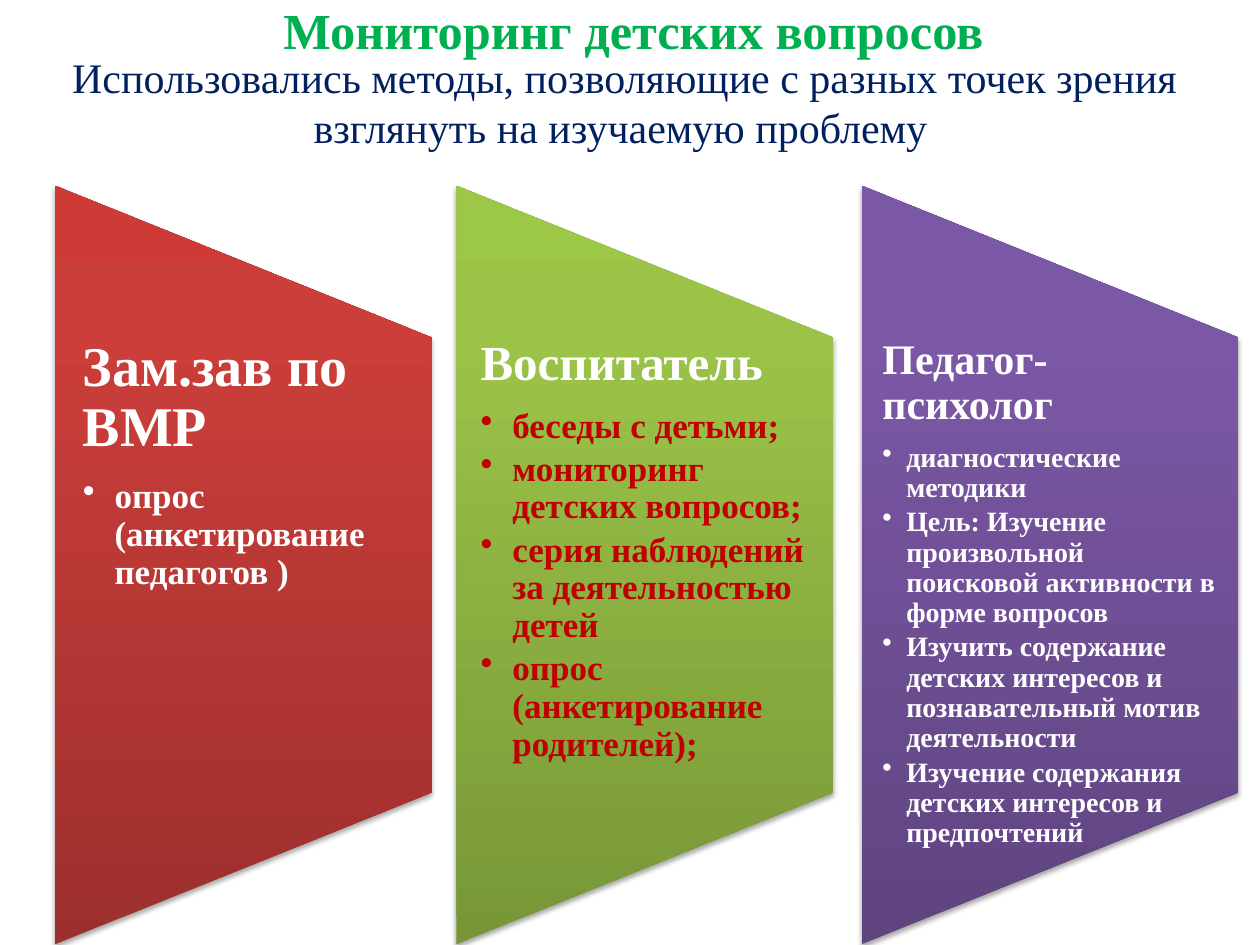
from dataclasses import dataclass

from lxml import etree
from pptx import Presentation
from pptx.dml.color import RGBColor
from pptx.enum.shapes import MSO_SHAPE
from pptx.enum.text import MSO_ANCHOR, PP_ALIGN
from pptx.oxml import parse_xml
from pptx.oxml.ns import qn
from pptx.util import Cm, Pt

TRAPEZOID = MSO_SHAPE.FLOWCHART_MANUAL_OPERATION
TOP, MIDDLE = MSO_ANCHOR.TOP, MSO_ANCHOR.MIDDLE
LEFT, CENTER = PP_ALIGN.LEFT, PP_ALIGN.CENTER
NS = 'xmlns:a="http://schemas.openxmlformats.org/drawingml/2006/main"'


@dataclass(frozen=True)
class Theme:
    font: str = "Times New Roman"
    spacer_font: str = "Lato"
    title: str = "00B050"
    subtitle: str = "002060"
    light: str = "FFFFFF"
    accent: str = "C00000"
    black: str = "000000"
    title_size: float = 28.8
    subtitle_size: float = 24
    spacer_size: float = 18


@dataclass(frozen=True)
class Panel:
    left: float
    inset: float
    indent: float
    gradient: tuple[str, str, str]
    heading: str
    heading_size: float
    items: tuple[str, ...]
    item_size: float
    item_color: str


THEME = Theme()

# Panel geometry in centimetres; the trapezoid is turned a quarter to the left
PANEL_W, PANEL_H, PANEL_MID = 7.59, 15.29, 11.39
BODY_TOP, BODY_H = 6.81, 9.17
STOPS = (0, 80, 100)

PANELS = (
    Panel(1.11, 0.56, 0.64, ("9C2F2D", "CB3E3A", "CE3B37"),
          "Зам.зав по ВМР", 32,
          ("опрос (анкетирование педагогов )",), 20, THEME.light),
    Panel(9.2, 0.49, 0.64, ("779737", "9BC348", "9DC746"),
          "Воспитатель", 28,
          ("беседы с детьми;",
           "мониторинг детских вопросов;",
           "серия наблюдений за деятельностью детей",
           "опрос (анкетирование родителей);"), 20, THEME.accent),
    Panel(17.37, 0.42, 0.48, ("5F4480", "7B58A6", "7C57A8"),
          "Педагог-психолог", 24,
          ("диагностические методики",
           "Цель: Изучение произвольной поисковой активности в форме вопросов",
           "Изучить содержание детских интересов и познавательный мотив деятельности",
           "Изучение содержания детских интересов и предпочтений"), 16, THEME.light),
)


def add_run(p, text: str, size: float, color: str, bold: bool = False,
            font: str = THEME.font) -> None:
    r = p.add_run()
    r.text = text
    r.font.name = font
    r.font.size = Pt(size)
    r.font.bold = bold
    r.font.color.rgb = RGBColor.from_string(color)


def add_text_box(s, left: float, top: float, width: float, height: float,
                 anchor=TOP):
    tf = s.shapes.add_textbox(Cm(left), Cm(top), Cm(width), Cm(height)).text_frame
    tf.word_wrap = True
    tf.vertical_anchor = anchor
    return tf


def format_paragraph(p, after: int, indent: float = 0) -> None:
    """Set tight lines, a percentage gap after, and a bullet when indented."""
    p.alignment = LEFT
    p.line_spacing = 0.9
    p_pr = p._p.get_or_add_pPr()
    gap = etree.SubElement(p_pr, qn("a:spcAft"))
    etree.SubElement(gap, qn("a:spcPct"), val=str(after * 1000))
    if indent:
        p.level = 1
        p_pr.set("marL", str(Cm(indent)))
        p_pr.set("indent", str(-Cm(indent)))
        etree.SubElement(p_pr, qn("a:buChar"), char="•")


def add_trapezoid(s, panel: Panel) -> None:
    center = panel.left + PANEL_W / 2
    sp = s.shapes.add_shape(TRAPEZOID, Cm(center - PANEL_H / 2),
                            Cm(PANEL_MID - PANEL_W / 2), Cm(PANEL_H), Cm(PANEL_W))
    sp.rotation = 270
    sp.line.fill.background()
    # Upright gradient and soft shadow, both independent of the rotation
    stops = "".join(f'<a:gs pos="{pos * 1000}"><a:srgbClr val="{color}"/></a:gs>'
                    for pos, color in zip(STOPS, panel.gradient))
    sp_pr = sp._element.spPr
    sp_pr.find(qn("a:prstGeom")).addnext(parse_xml(
        f'<a:gradFill {NS} rotWithShape="0"><a:gsLst>{stops}</a:gsLst>'
        '<a:lin ang="16200000" scaled="0"/></a:gradFill>'))
    sp_pr.append(parse_xml(
        f'<a:effectLst {NS}><a:outerShdw blurRad="{Pt(3.1)}" dist="{Pt(1.8)}" '
        f'dir="5400000" rotWithShape="0"><a:srgbClr val="{THEME.black}">'
        '<a:alpha val="35000"/></a:srgbClr></a:outerShdw></a:effectLst>'))


def add_panel(s, panel: Panel) -> None:
    add_trapezoid(s, panel)
    tf = add_text_box(s, panel.left, BODY_TOP, PANEL_W, BODY_H)
    tf.margin_left = tf.margin_right = Cm(panel.inset)
    tf.margin_top = tf.margin_bottom = 0
    p = tf.paragraphs[0]
    format_paragraph(p, after=35)
    add_run(p, panel.heading, panel.heading_size, THEME.light, bold=True)
    for item in panel.items:
        p = tf.add_paragraph()
        format_paragraph(p, after=15, indent=panel.indent)
        add_run(p, item, panel.item_size, panel.item_color, bold=True)


def main() -> None:
    prs = Presentation()
    prs.slide_width, prs.slide_height = Cm(25.4), Cm(19.05)
    s = prs.slides.add_slide(prs.slide_layouts[6])

    # Title
    p = add_text_box(s, 1.47, 0, 22.86, 1.17, MIDDLE).paragraphs[0]
    p.alignment = CENTER
    add_run(p, "Мониторинг детских вопросов ", THEME.title_size, THEME.title, bold=True)

    # Subtitle
    p = add_text_box(s, 0.51, 0.91, 24, 2.31).paragraphs[0]
    p.alignment = CENTER
    add_run(p, " ", THEME.spacer_size, THEME.black, font=THEME.spacer_font)
    add_run(p, "Использовались методы, позволяющие с разных точек зрения "
               "взглянуть на изучаемую проблему", THEME.subtitle_size, THEME.subtitle)

    # Panels
    for panel in PANELS:
        add_panel(s, panel)

    prs.save("out.pptx")


if __name__ == "__main__":
    main()
